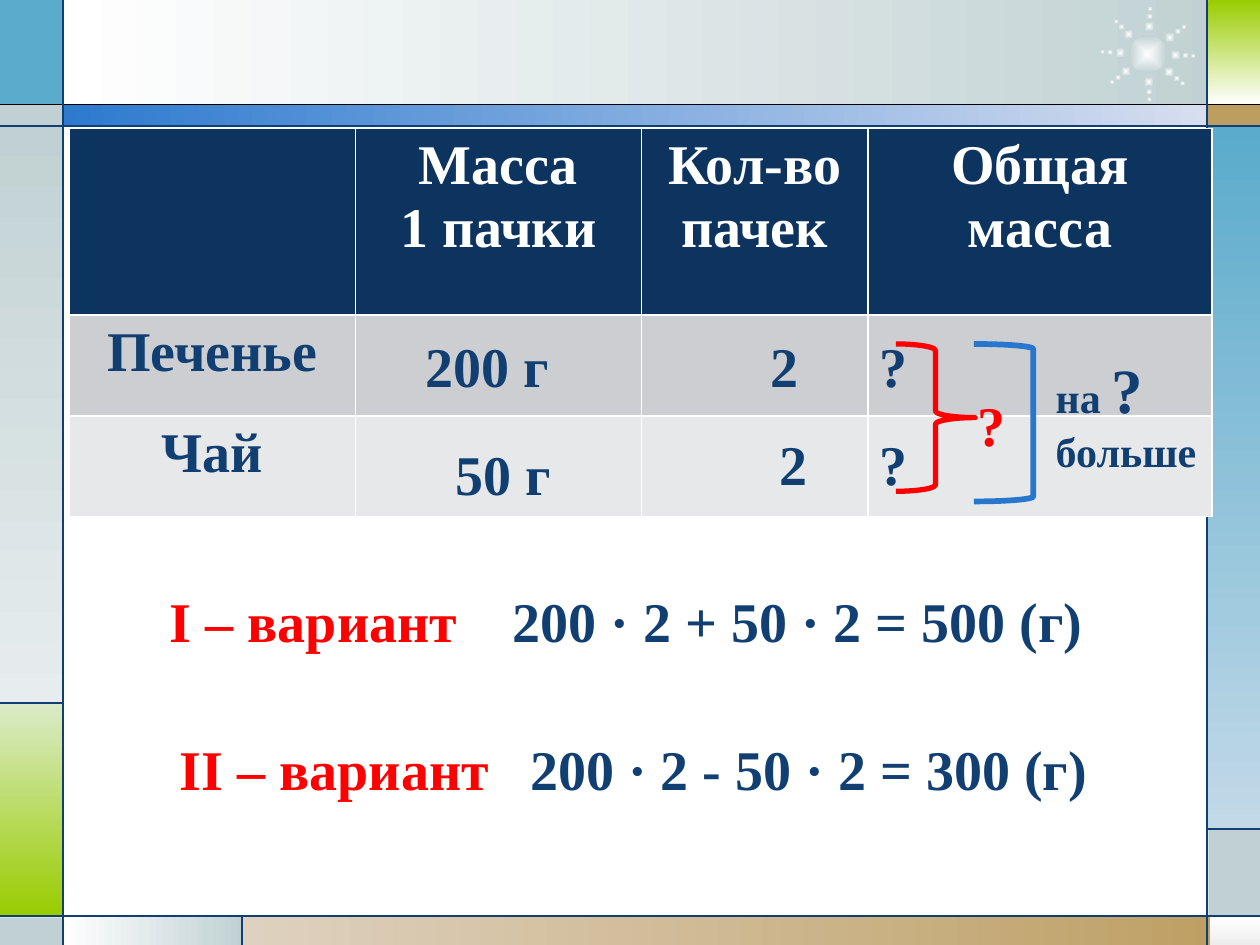
from math import cos, radians, sin

from lxml.etree import SubElement
from pptx import Presentation
from pptx.dml.color import RGBColor
from pptx.enum.shapes import MSO_CONNECTOR, MSO_SHAPE
from pptx.enum.text import MSO_AUTO_SIZE, PP_ALIGN
from pptx.oxml.ns import qn
from pptx.util import Inches, Pt

FONT = "Times New Roman"
WHITE = RGBColor(0xFF, 0xFF, 0xFF)
BLACK = RGBColor(0x00, 0x00, 0x00)
NAVY = RGBColor(0x11, 0x3F, 0x71)
HEADER = RGBColor(0x0D, 0x34, 0x5F)
ROW_DARK = RGBColor(0xCC, 0xCE, 0xD2)
ROW_LIGHT = RGBColor(0xE7, 0xE8, 0xEA)
RED = RGBColor(0xFF, 0x00, 0x00)
BLUE = RGBColor(0x28, 0x77, 0xCE)
SKY = RGBColor(0x5A, 0xAB, 0xCC)
PALE_SKY = RGBColor(0xC2, 0xD9, 0xE7)
GRAY = RGBColor(0xC1, 0xD1, 0xD3)
PALE_GRAY = RGBColor(0xE7, 0xED, 0xEE)
SILVER = RGBColor(0xED, 0xED, 0xED)
GREEN = RGBColor(0x99, 0xCC, 0x00)
PALE_GREEN = RGBColor(0xDB, 0xEB, 0xC9)
TAN = RGBColor(0xBD, 0x9E, 0x61)
PALE_TAN = RGBColor(0xDE, 0xD1, 0xBF)
BAND = RGBColor(0x2D, 0x7A, 0xCF)
PALE_BAND = RGBColor(0xD7, 0xDE, 0xF0)


def add_filled(kind, x, y, w, h, start, end=None, angle=0):
    shape = s.shapes.add_shape(kind, Inches(x), Inches(y), Inches(w), Inches(h))
    shape.shadow.inherit = False
    shape.line.fill.background()
    if end is None:
        shape.fill.solid()
        shape.fill.fore_color.rgb = start
    else:
        shape.fill.gradient()
        shape.fill.gradient_angle = angle
        for stop, color in zip(shape.fill.gradient_stops, (start, end)):
            stop.color.rgb = color
    return shape


def add_run(p, text, size, color):
    r = p.add_run()
    r.text = text
    r.font.name = FONT
    r.font.size = Pt(size)
    r.font.bold = True
    r.font.color.rgb = color


prs = Presentation()
prs.slide_width, prs.slide_height = Inches(10), Inches(7.5)
s = prs.slides.add_slide(prs.slide_layouts[6])

# Frame of coloured blocks; 270 degrees runs from top to bottom
for block in [
    (0.5, 0, 9.27, 0.84, WHITE, GRAY),
    (0, 0, 0.5, 0.84, SKY),
    (0, 0.83, 0.5, 0.17, GRAY),
    (0, 1, 0.5, 4.58, GRAY, PALE_GRAY, 270),
    (0, 5.58, 0.5, 1.69, PALE_GREEN, GREEN, 270),
    (0, 7.28, 0.5, 0.22, GRAY),
    (0.5, 7.27, 1.43, 0.23, WHITE, GRAY),
    (1.92, 7.27, 8.08, 0.23, PALE_TAN, TAN),
    (9.6, 7.28, 0.4, 0.22, WHITE, SILVER, 270),
    (9.59, 6.58, 0.41, 0.7, GRAY),
    (9.58, 1, 0.42, 5.58, SKY, PALE_SKY, 270),
    (9.58, 0.83, 0.42, 0.17, TAN),
    (9.59, 0, 0.41, 0.83, GREEN, WHITE, 270),
    (0.5, 0.83, 9.09, 0.17, BAND, PALE_BAND),
]:
    add_filled(MSO_SHAPE.RECTANGLE, *block)

# Sunburst: a core and eight rays of three dots
dots = [(9.11, 0.43, 0.3)]
for angle in (2, 40, 88, 142, 183, 226, 273, 323):
    for radius, size in ((0.22, 0.08), (0.3, 0.05), (0.36, 0.04)):
        dots.append((9.11 + radius * cos(radians(angle)),
                     0.43 + radius * sin(radians(angle)), size))
for cx, cy, size in dots:
    dot = add_filled(MSO_SHAPE.OVAL, cx - size / 2, cy - size / 2, size, size, WHITE, GRAY)
    grad = dot.fill._xPr.find(qn("a:gradFill"))
    grad.remove(grad.find(qn("a:lin")))
    radial = SubElement(grad, qn("a:path"), path="shape")
    SubElement(radial, qn("a:fillToRect"), l="50000", t="50000", r="50000", b="50000")

# Thin frame lines
for x1, y1, x2, y2, color in [
    (0, 0.83, 10, 0.83, BLACK),
    (0, 1, 10, 1, NAVY),
    (0, 7.27, 10, 7.27, NAVY),
    (0.5, 0, 0.5, 7.5, NAVY),
    (9.58, 0, 9.58, 7.5, NAVY),
    (0.5, 5.58, 0, 5.58, NAVY),
    (1.92, 7.27, 1.92, 7.5, NAVY),
    (9.58, 6.58, 10, 6.58, NAVY),
]:
    line = s.shapes.add_connector(MSO_CONNECTOR.STRAIGHT, Inches(x1), Inches(y1),
                                  Inches(x2), Inches(y2))
    line.line.color.rgb = color
    line.line.width = Pt(0.75)
    SubElement(line._element.spPr, qn("a:effectLst"))

# Table of masses
rows = [
    (1.48, HEADER, WHITE, ["", "Масса\n1 пачки", "Кол-во\nпачек", "Общая масса"]),
    (0.8, ROW_DARK, NAVY, ["Печенье", "", "", ""]),
    (0.8, ROW_LIGHT, NAVY, ["Чай", "", "", ""]),
]
table = s.shapes.add_table(3, 4, Inches(0.55), Inches(1.02), Inches(9.07), Inches(3.08)).table
for column, width in zip(table.columns, (2.27, 2.27, 1.8, 2.73)):
    column.width = Inches(width)
for row, (height, fill, color, texts) in zip(table.rows, rows):
    row.height = Inches(height)
    for cell, text in zip(row.cells, texts):
        cell.fill.solid()
        cell.fill.fore_color.rgb = fill
        if not text:
            continue
        tf = cell.text_frame
        for i, part in enumerate(text.split("\n")):
            p = tf.add_paragraph() if i else tf.paragraphs[0]
            p.alignment = PP_ALIGN.CENTER
            add_run(p, part, 32, color)

# Brace for the sum, bracket for the difference
for kind, x, y, w, h, color, width in [
    (MSO_SHAPE.RIGHT_BRACE, 7.11, 2.73, 0.63, 1.17, RED, 3),
    (MSO_SHAPE.RIGHT_BRACKET, 7.73, 2.73, 0.47, 1.25, BLUE, 3.25),
]:
    mark = s.shapes.add_shape(kind, Inches(x), Inches(y), Inches(w), Inches(h))
    mark.shadow.inherit = False
    mark.fill.background()
    mark.line.color.rgb = color
    mark.line.width = Pt(width)

# Table values, comparison note and the two solutions (paragraphs of runs)
for x, y, w, h, wrap, tab, paragraphs in [
    (3.28, 2.58, 1.19, 0.64, False, None, [[("200 г", 32, NAVY)]]),
    (3.52, 3.44, 0.97, 0.64, False, None, [[("50 г", 32, NAVY)]]),
    (6.09, 3.36, 0.43, 0.64, False, None, [[("2", 32, NAVY)]]),
    (6.02, 2.58, 0.43, 0.64, False, None, [[("2", 32, NAVY)]]),
    (6.88, 3.36, 0.43, 0.64, False, None, [[("?", 32, NAVY)]]),
    (6.88, 2.58, 0.55, 0.64, True, None, [[("?", 32, NAVY)]]),
    (7.66, 3.05, 0.43, 0.64, False, None, [[("?", 32, RED)]]),
    (8.28, 2.73, 1.33, 1.11, True, None,
     [[("на ", 24, NAVY), ("?", 36, NAVY)], [("больше", 24, NAVY)]]),
    (1.25, 4.61, 7.5, 0.64, True, 2.72,
     [[("I – вариант", 32, RED), ("\t200 · 2 + 50 · 2 = 500 (г)", 32, NAVY)]]),
    (1.33, 5.78, 7.66, 0.64, True, 2.78,
     [[("II – вариант", 32, RED), ("\t200 · 2 - 50 · 2 = 300 (г)", 32, NAVY)]]),
]:
    box = s.shapes.add_textbox(Inches(x), Inches(y), Inches(w), Inches(h))
    tf = box.text_frame
    tf.word_wrap = wrap
    tf.auto_size = MSO_AUTO_SIZE.SHAPE_TO_FIT_TEXT
    for i, runs in enumerate(paragraphs):
        p = tf.add_paragraph() if i else tf.paragraphs[0]
        for text, size, color in runs:
            add_run(p, text, size, color)
        if tab:
            tabs = SubElement(p._p.get_or_add_pPr(), qn("a:tabLst"))
            SubElement(tabs, qn("a:tab"), pos=str(Inches(tab)), algn="l")

prs.save("out.pptx")
